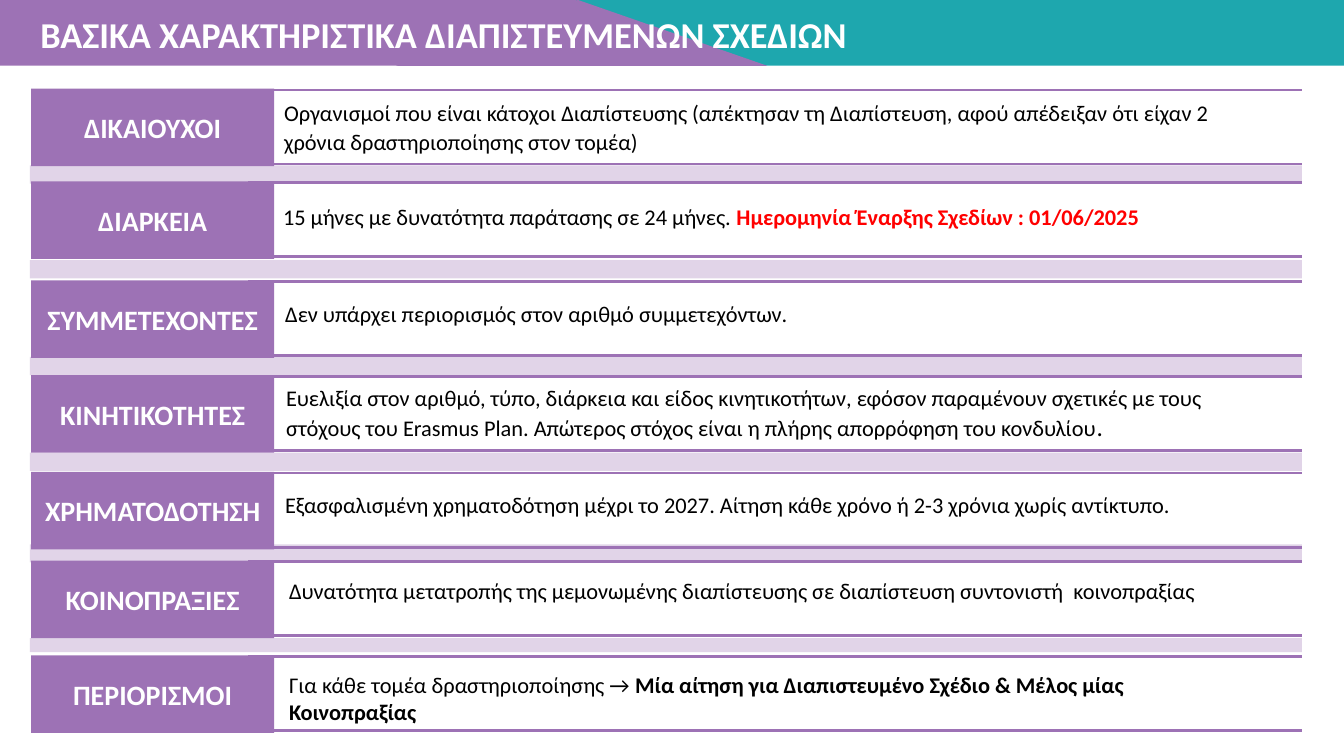
"""Build the slide on the main features of accredited projects."""
from pptx import Presentation
from pptx.dml.color import RGBColor
from pptx.enum.shapes import MSO_CONNECTOR as Connector, MSO_SHAPE as Preset
from pptx.enum.text import MSO_ANCHOR as Anchor, MSO_AUTO_SIZE as AutoSize, PP_ALIGN as Align
from pptx.oxml.ns import qn
from pptx.util import Pt
from lxml import etree

COLORS = {"purple": "9D72B5", "teal": "1EA7AE", "white": "FFFFFF", "black": "000000", "red": "FF0000"}
BODY = {"size": 16, "color": "black", "bold": False}
HEADING = {"size": 20, "color": "white", "bold": True}

FEATURES = [
    ("ΔΙΚΑΙΟΥΧΟΙ", 63.4, (195.8, 67, 710, 48), [
        ("Οργανισμοί που είναι κάτοχοι Διαπίστευσης (απέκτησαν τη Διαπίστευση, αφού απέδειξαν "
         "ότι είχαν 2 χρόνια δραστηριοποίησης στον τομέα)", {}),
        (" ", {"size": 18})]),
    ("ΔΙΑΡΚΕΙΑ", 129.6, (195.1, 141.8, 732, 26.6), [
        ("15 μήνες με δυνατότητα παράτασης σε 24 μήνες. ", {}),
        ("Ημερομηνία Έναρξης Σχεδίων : 01/06/2025", {"color": "red", "bold": True})]),
    ("ΣΥΜΜΕΤΕΧΟΝΤΕΣ", 200.2, (196.6, 211, 505, 26.6), [
        ("Δεν υπάρχει περιορισμός στον αριθμό συμμετεχόντων.", {})]),
    ("ΚΙΝΗΤΙΚΟΤΗΤΕΣ", 268, (197.3, 270.7, 710.6, 70.6), [
        ("Ευελιξία στον αριθμό, τύπο, διάρκεια και είδος κινητικοτήτων, εφόσον παραμένουν σχετικές "
         "με τους στόχους του Erasmus Plan. Απώτερος στόχος είναι η πλήρης απορρόφηση του κονδυλίου", {}),
        (".", {"size": 18})]),
    ("ΧΡΗΜΑΤΟΔΟΤΗΣΗ", 337, (196.6, 347, 724.3, 26.6), [
        ("Εξασφαλισμένη χρηματοδότηση μέχρι το 2027. Αίτηση κάθε χρόνο ή 2-3 χρόνια χωρίς αντίκτυπο.", {})]),
    ("ΚΟΙΝΟΠΡΑΞΙΕΣ", 400.4, (199.4, 409, 665.3, 26.6), [
        ("Δυνατότητα μετατροπής της μεμονωμένης διαπίστευσης σε διαπίστευση συντονιστή  κοινοπραξίας", {})]),
    ("ΠΕΡΙΟΡΙΣΜΟΙ", 468.2, (199.4, 476, 633, 46), [
        ("Για κάθε τομέα δραστηριοποίησης → ", {}),
        ("Μία αίτηση για Διαπιστευμένο Σχέδιο & Μέλος μίας Κοινοπραξίας", {"bold": True})]),
]
SEPARATORS = [(118.1, 13), (185.8, 13), (254.9, 13), (323.3, 13), (388.8, 13), (455.8, 10)]


def add_block(preset, bounds, color):
    block = slide.shapes.add_shape(preset, *map(Pt, bounds))
    block.shadow.inherit = False
    block.fill.solid()
    block.fill.fore_color.rgb = RGBColor.from_string(COLORS[color])
    block.line.fill.background()
    return block


def write_run(paragraph, text, style):
    run = paragraph.add_run()
    run.text = text
    run.font.color.rgb = RGBColor.from_string(COLORS[style["color"]])
    formats = {"name": "Calibri", "size": Pt(style["size"]), "bold": style["bold"]}
    for attribute, value in formats.items():
        setattr(run.font, attribute, value)


deck = Presentation()
deck.slide_width, deck.slide_height = Pt(960), Pt(540)
slide = deck.slides.add_slide(deck.slide_layouts[5])

add_block(Preset.RECTANGLE, (347, 0, 613, 47), "teal")
add_block(Preset.RECTANGLE, (0, 0, 412, 47), "purple")
slope = add_block(Preset.ISOSCELES_TRIANGLE, (283, 0, 265, 47), "purple")
slope.adjustments[0] = 0.49

heading = slide.shapes.title
heading.element.getparent().append(heading.element)
for attribute, value in zip(("left", "top", "width", "height"), (21.6, 5, 596, 39)):
    setattr(heading, attribute, Pt(value))
heading_format = {"word_wrap": False, "auto_size": AutoSize.NONE, "vertical_anchor": Anchor.TOP}
for attribute, value in heading_format.items():
    setattr(heading.text_frame, attribute, value)
heading_line = heading.text_frame.paragraphs[0]
heading_line.alignment = Align.LEFT
write_run(heading_line, "ΒΑΣΙΚΑ ΧΑΡΑΚΤΗΡΙΣΤΙΚΑ ΔΙΑΠΙΣΤΕΥΜΕΝΩΝ ΣΧΕΔΙΩΝ", {**HEADING, "size": 26})

for top, height in SEPARATORS:
    separator = add_block(Preset.RECTANGLE, (21.4, top, 908.6, height), "purple")
    tint = separator.fill._xPr.find(qn("a:solidFill"))[0]
    etree.SubElement(tint, qn("a:alpha"), val="30000")

for name, top, bounds, passages in FEATURES:
    label = add_block(Preset.RECTANGLE, (22.3, top, 173.5, 55.4), "purple")
    label.text_frame.vertical_anchor = Anchor.MIDDLE
    label.text_frame.word_wrap = True
    label_line = label.text_frame.paragraphs[0]
    label_line.alignment = Align.CENTER
    write_run(label_line, name, HEADING)

    for offset in (0.9, 53.8):
        rule = slide.shapes.add_connector(
            Connector.STRAIGHT, Pt(177.2), Pt(top + offset), Pt(930.2), Pt(top + offset))
        rule.line.color.rgb = RGBColor.from_string(COLORS["purple"])
        rule.line.width = Pt(2)
        etree.SubElement(rule.element.spPr, qn("a:effectLst"))

    description = slide.shapes.add_textbox(*map(Pt, bounds)).text_frame
    description.word_wrap = True
    for text, changes in passages:
        write_run(description.paragraphs[0], text, {**BODY, **changes})

deck.save("out.pptx")
